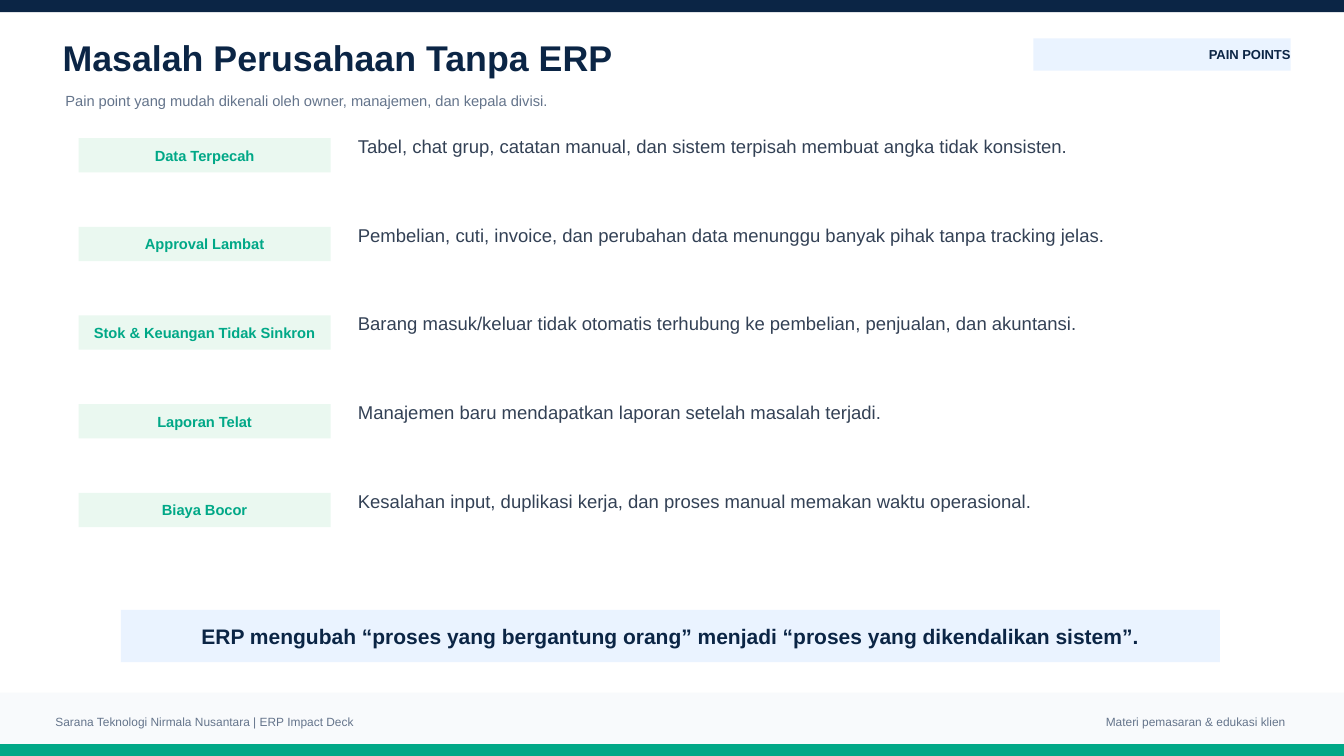
import pptx
import pptx.util
import pptx.dml.color
import pptx.enum.shapes
import pptx.enum.text

PX = 9144  # 100 px to the inch
NAVY, GREEN, GRAY, SLATE = "0B2545", "00A887", "64748B", "334155"
ICE, MINT, PALE = "EAF3FF", "EAF8F0", "F8FAFC"
ALIGN = pptx.enum.text.PP_ALIGN
ANCHOR = pptx.enum.text.MSO_ANCHOR

deck = pptx.Presentation()
deck.slide_width = 1333 * PX
deck.slide_height = 750 * PX
slide = deck.slides.add_slide(deck.slide_layouts[5])


def write(shape, text, size, hue, bold=False, align=ALIGN.LEFT, anchor=ANCHOR.MIDDLE):
    frame = shape.text_frame
    frame.margin_left = frame.margin_right = 0
    frame.margin_top = frame.margin_bottom = 0
    frame.word_wrap = True
    frame.auto_size = pptx.enum.text.MSO_AUTO_SIZE.NONE
    frame.vertical_anchor = anchor
    para = frame.paragraphs[0]
    para.alignment = align
    run = para.add_run()
    run.text = text
    run.font.name = "Arial"
    run.font.size = pptx.util.Pt(size)
    run.font.bold = bold
    run.font.color.rgb = pptx.dml.color.RGBColor.from_string(hue)


def block(left, top, width, height, hue=None):
    """Add a filled rectangle, or a plain text box when no hue is given."""
    area = [n * PX for n in (left, top, width, height)]
    if hue is None:
        return slide.shapes.add_textbox(*area)
    shape = slide.shapes.add_shape(pptx.enum.shapes.MSO_SHAPE.RECTANGLE, *area)
    shape.shadow.inherit = False
    shape.fill.solid()
    shape.fill.fore_color.rgb = pptx.dml.color.RGBColor.from_string(hue)
    shape.line.fill.background()
    return shape


# Frame and footer
block(0, 0, 1333, 12, NAVY)
block(0, 738, 1333, 12, GREEN)
block(0, 687, 1333, 51, PALE)
write(block(55, 707, 560, 18), "Sarana Teknologi Nirmala Nusantara | ERP Impact Deck", 8.5, GRAY)
write(block(845, 707, 430, 18), "Materi pemasaran & edukasi klien", 8.5, GRAY, align=ALIGN.RIGHT)

# Heading
title = slide.shapes.title
title.left, title.top, title.width, title.height = [n * PX for n in (62, 36, 940, 42)]
write(title, "Masalah Perusahaan Tanpa ERP", 25.5, NAVY, True)
write(block(65, 86, 1020, 28),
      "Pain point yang mudah dikenali oleh owner, manajemen, dan kepala divisi.", 10.5, GRAY)
write(block(1025, 38, 255, 32, ICE), "PAIN POINTS", 9.3, NAVY, True, ALIGN.RIGHT)

# Problems
pains = [
    ("Data Terpecah",
     "Tabel, chat grup, catatan manual, dan sistem terpisah membuat angka tidak konsisten."),
    ("Approval Lambat",
     "Pembelian, cuti, invoice, dan perubahan data menunggu banyak pihak tanpa tracking jelas."),
    ("Stok & Keuangan Tidak Sinkron",
     "Barang masuk/keluar tidak otomatis terhubung ke pembelian, penjualan, dan akuntansi."),
    ("Laporan Telat",
     "Manajemen baru mendapatkan laporan setelah masalah terjadi."),
    ("Biaya Bocor",
     "Kesalahan input, duplikasi kerja, dan proses manual memakan waktu operasional."),
]
for row, (label, detail) in enumerate(pains):
    top = 134 + 88 * row
    write(block(78, top + 3, 250, 34, MINT), label, 10.5, GREEN, True, ALIGN.CENTER)
    write(block(355, top, 760, 42), detail, 13.2, SLATE, anchor=ANCHOR.TOP)

# Takeaway
write(block(120, 605, 1090, 52, ICE),
      "ERP mengubah “proses yang bergantung orang” menjadi “proses yang dikendalikan sistem”.",
      15, NAVY, True, ALIGN.CENTER)

deck.save("out.pptx")
